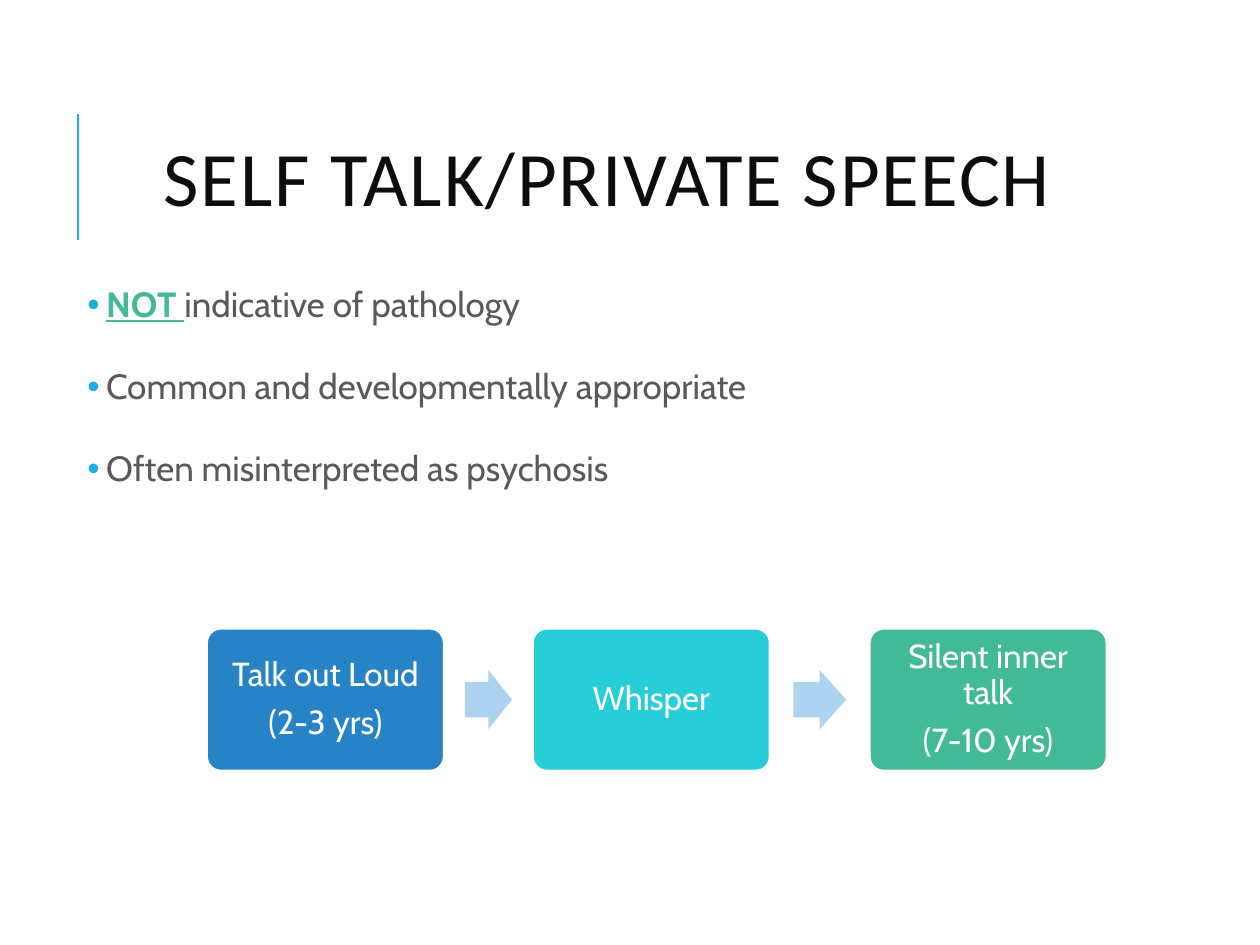
"""Build the slide on self talk and private speech."""
from itertools import pairwise

from lxml import etree
from pptx import Presentation
from pptx.dml.color import RGBColor
from pptx.enum.shapes import MSO_CONNECTOR, MSO_SHAPE
from pptx.enum.text import MSO_ANCHOR, MSO_AUTO_SIZE, PP_ALIGN
from pptx.oxml.ns import qn
from pptx.util import Cm, Pt

STRAIGHT = MSO_CONNECTOR.STRAIGHT
ROUNDED = MSO_SHAPE.ROUNDED_RECTANGLE
RIGHT_ARROW = MSO_SHAPE.RIGHT_ARROW
MIDDLE, TOP = MSO_ANCHOR.MIDDLE, MSO_ANCHOR.TOP
CENTER, LEFT = PP_ALIGN.CENTER, PP_ALIGN.LEFT
NO_FIT = MSO_AUTO_SIZE.NONE

COLORS = {
    "accent": "1CADE4", "title": "0D0D0D", "body": "595959",
    "blue": "2683C6", "cyan": "27CED7", "green": "42BA97",
    "arrow": "ACD3EF", "white": "FFFFFF",
}
TITLE = "SELF TALK/PRIVATE SPEECH"
POINTS = [
    ("NOT ", "indicative of pathology"),
    ("", "Common and developmentally appropriate"),
    ("", "Often misinterpreted as psychosis"),
]
STAGES = [
    ("Talk out Loud\n(2-3 yrs)", "blue", 4.17),
    ("Whisper", "cyan", 10.74),
    ("Silent inner talk\n(7-10 yrs)", "green", 17.53),
]
STAGE_TOP, STAGE_WIDTH, STAGE_HEIGHT = 12.67, 4.78, 2.87
ARROW_SHARE, ARROW_HEIGHT = 0.53, 1.19


def color(name):
    return RGBColor.from_string(COLORS[name])


def style_font(font, face, size, color_name):
    font.name, font.size = face, Pt(size)
    font.color.rgb = color(color_name)


def place(shape, left, top, width, height):
    shape.left, shape.top = Cm(left), Cm(top)
    shape.width, shape.height = Cm(width), Cm(height)


def set_frame(frame, anchor, inset):
    frame.word_wrap, frame.auto_size = True, NO_FIT
    frame.vertical_anchor = anchor
    frame.margin_left = frame.margin_right = Cm(inset)
    frame.margin_top = frame.margin_bottom = Cm(inset)


def add_bullet(paragraph):
    properties = paragraph._p.get_or_add_pPr()
    properties.set("marL", str(Cm(0.74)))
    properties.set("indent", str(-Cm(0.38)))
    bullet_color = etree.SubElement(properties, qn("a:buClr"))
    etree.SubElement(bullet_color, qn("a:srgbClr"), val=COLORS["accent"])
    etree.SubElement(properties, qn("a:buFont"), typeface="Arial")
    etree.SubElement(properties, qn("a:buChar"), char="•")


def add_title(slide):
    title = slide.shapes.title
    place(title, 2.13, 1.63, 20.24, 4.17)
    title.text_frame.text = TITLE
    set_frame(title.text_frame, MIDDLE, 0.13)
    heading = title.text_frame.paragraphs[0]
    heading.alignment, heading.line_spacing = CENTER, 0.8
    style_font(heading.runs[0].font, "Calibri", 44, "title")
    heading.runs[0].font._element.set("spc", "100")

    rule = slide.shapes.add_connector(STRAIGHT, Cm(1.57), Cm(4.83), Cm(1.57), Cm(2.29))
    rule.line.color.rgb, rule.line.width = color("accent"), Pt(1.5)
    etree.SubElement(rule._element.spPr, qn("a:effectLst"))


def add_points(slide):
    body = slide.placeholders[1]
    place(body, 1.27, 5.66, 23.93, 12.32)
    frame = body.text_frame
    set_frame(frame, TOP, 0.13)
    for index, (emphasis, statement) in enumerate(POINTS):
        paragraph = frame.add_paragraph() if index else frame.paragraphs[0]
        add_bullet(paragraph)
        paragraph.alignment, paragraph.line_spacing = LEFT, 0.9
        paragraph.space_before = Pt(25.4 if index else 0)
        if emphasis:
            stressed = paragraph.add_run()
            stressed.text = emphasis
            style_font(stressed.font, "Cabin", 20, "green")
            stressed.font.bold = stressed.font.underline = True
        plain = paragraph.add_run()
        plain.text = statement
        style_font(plain.font, "Cabin", 20, "body")


def add_stage(slide, label, fill, left):
    stage = slide.shapes.add_shape(
        ROUNDED, Cm(left), Cm(STAGE_TOP), Cm(STAGE_WIDTH), Cm(STAGE_HEIGHT))
    stage.adjustments[0] = 0.1
    stage.shadow.inherit = False
    stage.fill.solid()
    stage.fill.fore_color.rgb = color(fill)
    stage.line.color.rgb, stage.line.width = color("white"), Pt(1.25)
    stage.text_frame.text = label
    set_frame(stage.text_frame, MIDDLE, 0.2)
    for paragraph in stage.text_frame.paragraphs:
        paragraph.alignment, paragraph.line_spacing = CENTER, 0.9
        paragraph.space_after = Pt(6.65)
        style_font(paragraph.runs[0].font, "Cabin", 19, "white")


def add_arrow(slide, start, end):
    width = (end - start) * ARROW_SHARE
    left = (start + end - width) / 2
    top = STAGE_TOP + (STAGE_HEIGHT - ARROW_HEIGHT) / 2
    arrow = slide.shapes.add_shape(
        RIGHT_ARROW, Cm(left), Cm(top), Cm(width), Cm(ARROW_HEIGHT))
    arrow.adjustments[0], arrow.adjustments[1] = 0.6, 0.5
    arrow.shadow.inherit = False
    arrow.fill.solid()
    arrow.fill.fore_color.rgb = color("arrow")
    arrow.line.fill.background()


def main():
    deck = Presentation()
    deck.slide_width, deck.slide_height = Cm(25.4), Cm(19.05)
    slide = deck.slides.add_slide(deck.slide_layouts[1])
    add_title(slide)
    add_points(slide)
    for label, fill, left in STAGES:
        add_stage(slide, label, fill, left)
    for (_, _, before), (_, _, after) in pairwise(STAGES):
        add_arrow(slide, before + STAGE_WIDTH, after)
    deck.save("out.pptx")


if __name__ == "__main__":
    main()
